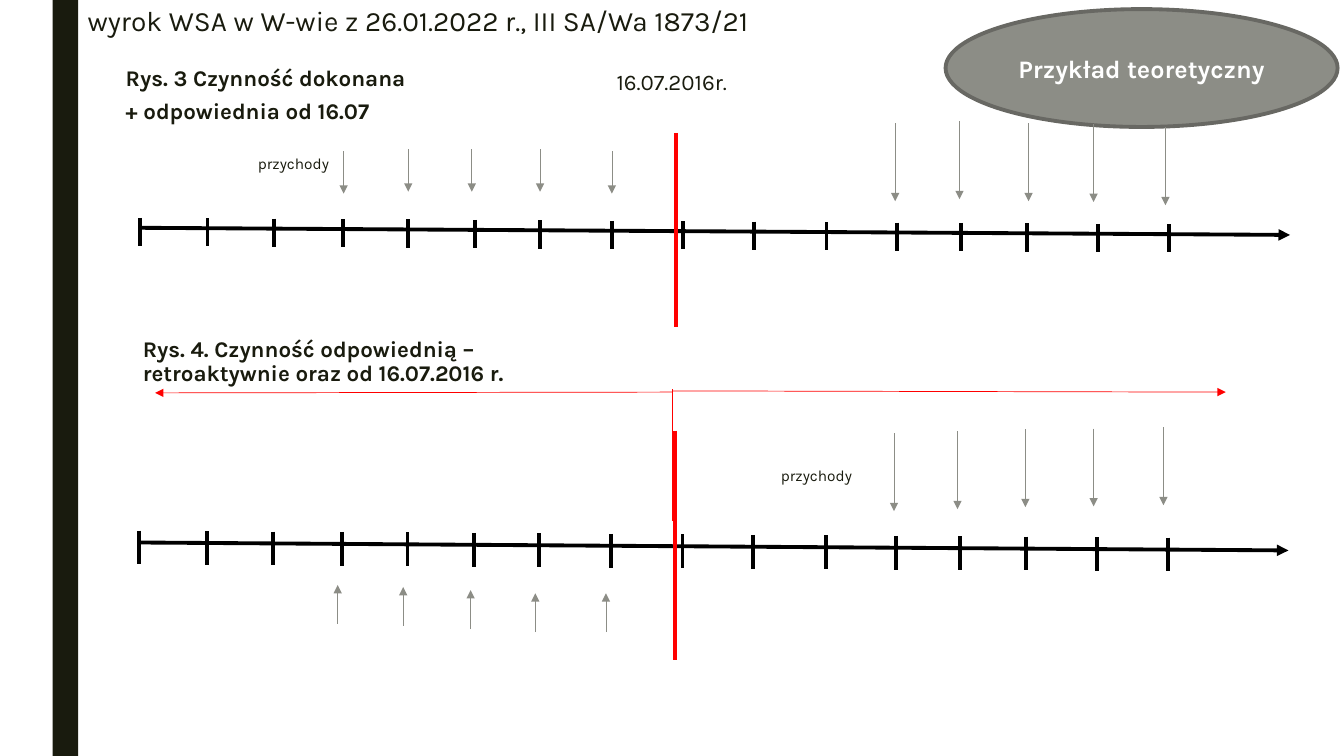
from pptx import Presentation
from pptx import util as u
from pptx.dml.color import RGBColor
from pptx.enum import shapes, text
from pptx.oxml.ns import qn
from lxml import etree

INK = RGBColor(0x19, 0x1B, 0x0E)
BLACK = RGBColor(0, 0, 0)
RED = RGBColor(0xFF, 0, 0)
GREY = RGBColor(0x8C, 0x8D, 0x86)
RIM = RGBColor(0x68, 0x68, 0x63)
WHITE = RGBColor(0xFF, 0xFF, 0xFF)
FONT = "Karla"

TICKS = [0, 1.7, 3.38, 5.11, 6.76, 8.43, 10.08, 11.89,
         13.69, 15.47, 17.3, 19.08, 20.68, 22.35, 24.13, 25.93]


def add_run(p, words, size, color=INK, bold=False):
    """Append one formatted run to a paragraph."""
    r = p.add_run()
    r.text = words
    r.font.name, r.font.size, r.font.bold = FONT, u.Pt(size), bold
    r.font.color.rgb = color


def add_label(s, box, runs, spacing=0.89, bold=False):
    """Place a wrapped text box; a None entry in runs is a line break."""
    sp = s.shapes.add_textbox(*map(u.Cm, box))
    tf = sp.text_frame
    tf.word_wrap = True
    p = tf.paragraphs[0]
    p.line_spacing = spacing
    for run in runs:
        if run is None:
            p.add_line_break()
        else:
            add_run(p, *run, bold=bold)


def add_line(s, start, end, color, width, arrow=False):
    """Draw a straight line, with an arrowhead at its end if asked."""
    c = s.shapes.add_connector(shapes.MSO_CONNECTOR.STRAIGHT,
                               *map(u.Cm, (*start, *end)))
    c.line.color.rgb = color
    c.line.width = u.Pt(width)
    if arrow:
        etree.SubElement(c.line._get_or_add_ln(), qn("a:tailEnd"), type="triangle")
    etree.SubElement(c._element.spPr, qn("a:effectLst"))


def add_side_bar(s, box):
    """Draw the dark vertical bar."""
    sp = s.shapes.add_shape(shapes.MSO_SHAPE.RECTANGLE, *map(u.Cm, box))
    sp.shadow.inherit = False
    sp.fill.solid()
    sp.fill.fore_color.rgb = INK
    sp.line.fill.background()


def add_callout(s, box, words):
    """Draw the grey ellipse with its centred caption."""
    sp = s.shapes.add_shape(shapes.MSO_SHAPE.OVAL, *map(u.Cm, box))
    sp.shadow.inherit = False
    sp.fill.solid()
    sp.fill.fore_color.rgb = GREY
    sp.line.color.rgb = RIM
    sp.line.width = u.Pt(2.75)
    tf = sp.text_frame
    tf.word_wrap = True
    tf.vertical_anchor = text.MSO_ANCHOR.MIDDLE
    p = tf.paragraphs[0]
    p.alignment = text.PP_ALIGN.CENTER
    add_run(p, words, 18, WHITE, True)


def add_timeline(s, box, axis_y, tick_rise, tick_height, drop):
    """Draw a sloping ticked axis and the red cut-off line inside a box."""
    left, top, width, height = box
    y = top + axis_y
    add_line(s, (left, y), (left + width, y + drop), BLACK, 2.75, True)
    for dx in TICKS:
        tick_top = y - tick_rise + drop * dx / width
        add_line(s, (left + dx, tick_top), (left + dx, tick_top + tick_height),
                 BLACK, 2.75)
    cut = left + 13.5
    add_line(s, (cut, top), (cut, top + height), RED, 2.75)


def add_income_arrows(s, starts, length):
    """Draw thin vertical arrows; a negative length points upwards."""
    for x, y in starts:
        add_line(s, (x, y), (x, y + length), GREY, 0.5, True)


def add_effect_span(s, box):
    """Draw the two-way red span with its stem."""
    left, top, width, height = box
    stem = left + 13.03
    add_line(s, (stem, top + height), (stem, top), RED, 0.5)
    add_line(s, (stem, top + 0.05), (left + width, top + 0.08), RED, 0.5, True)
    add_line(s, (stem, top + 0.08), (left, top + 0.1), RED, 0.5, True)


def main():
    """Build and save the slide."""
    prs = Presentation()
    prs.slide_width, prs.slide_height = u.Cm(33.87), u.Cm(19.05)
    s = prs.slides.add_slide(prs.slide_layouts[6])

    add_side_bar(s, (1.33, 0, 0.64, 19.05))
    add_label(s, (2.92, 0.74, 9.3, 4.11),
              [("Rys. 3 Czynność dokonana", 16), (" ", 44), None,
               ("+ odpowiednia od 16.07", 16)], bold=True)
    add_label(s, (15.29, 1.65, 5.05, 1.57), [("16.07.2016r.", 16)], 0.94)
    add_label(s, (1.96, 0.03, 26.67, 9.96),
              [("wyrok WSA w W-wie z 26.01.2022 r., III SA/Wa 1873/21", 20)], 0.94)
    add_label(s, (3.35, 8.41, 11.25, 4.42),
              [("Rys. 4. Czynność odpowiednią – retroaktywnie oraz od 16.07.2016 r.", 16)],
              bold=True)
    for left, top in [(6.25, 3.66), (19.43, 11.53)]:
        add_label(s, (left, top, 2.92, 0.86), [("przychody", 11), (" ", 16)])
    add_callout(s, (23.83, 0.23, 9.88, 2.97), "Przykład teoretyczny")

    add_timeline(s, (3.53, 3.35, 28.98, 4.88), 2.39, 0.25, 0.71, 0.18)
    add_timeline(s, (3.51, 10.85, 28.96, 5.79), 2.82, 0.3, 0.85, 0.2)
    add_income_arrows(s, [(8.66, 3.81), (10.29, 3.76), (11.89, 3.76),
                          (13.61, 3.76), (15.42, 3.81)], 1.07)
    add_income_arrows(s, [(22.56, 3.1), (24.18, 3.05), (25.92, 3.1),
                          (27.56, 3.12), (29.37, 3.2)], 1.97)
    add_income_arrows(s, [(22.53, 10.92), (24.13, 10.87), (25.84, 10.82),
                          (27.56, 10.8), (29.32, 10.77)], 1.96)
    add_income_arrows(s, [(8.51, 15.72), (10.16, 15.77), (11.86, 15.85),
                          (13.49, 15.93), (15.27, 15.93)], -0.98)
    add_effect_span(s, (3.91, 9.8, 26.98, 3.33))

    prs.save("out.pptx")


if __name__ == "__main__":
    main()
